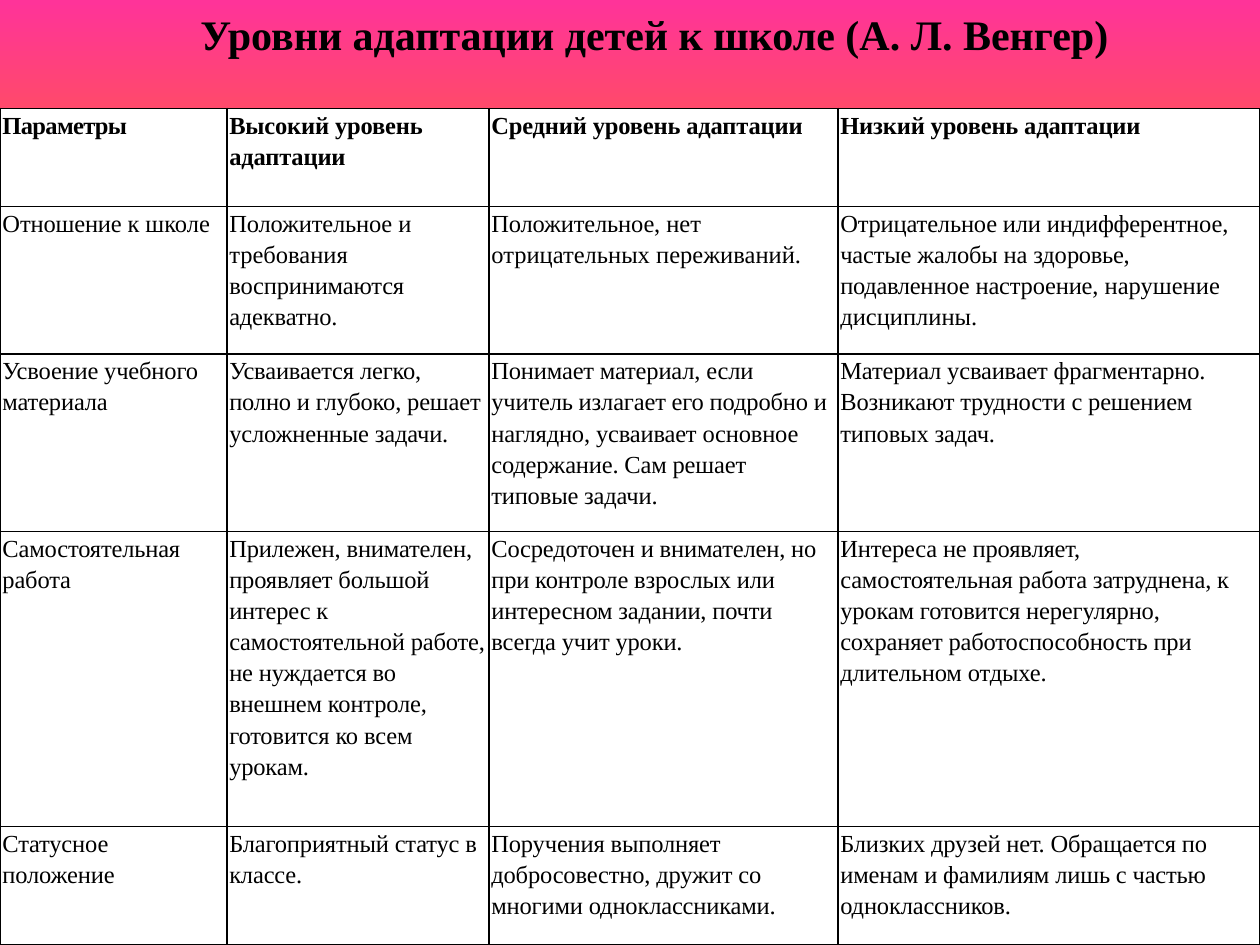
from typing import NamedTuple

from lxml.etree import SubElement
from pptx import Presentation
from pptx.dml.color import RGBColor
from pptx.enum.text import MSO_ANCHOR, PP_ALIGN
from pptx.oxml import parse_xml
from pptx.oxml.ns import nsdecls, qn
from pptx.util import Inches, Pt

COLORS = {"text": "000000", "border": "000000", "cell": "FFFFFF"}
RAINBOW = ["FF3399", "FF6633", "FFFF00", "01A78F", "3366FF"]
FONT = "Times New Roman"
WIDTH, HEIGHT = 10, 7.5

# Column and row sizes of the table, in inches
COLS = [1.8, 2.08, 2.77, 3.35]
ROWS = [0.78, 1.17, 1.41, 2.34, 0.94]
TABLE_TOP = HEIGHT - sum(ROWS)


class Span(NamedTuple):
    text: str
    spacing: int = -10  # hundredths of a point


class Level(NamedTuple):
    """One table row: a parameter and its three adaptation levels."""
    parameter: list[Span]
    high: list[Span]
    middle: list[Span]
    low: list[Span]


LEVELS = [
    Level([Span("Параметры", -40)],
          [Span("Высокий уровень адаптации")],
          [Span("Средний уровень адаптации")],
          [Span("Низкий уровень адаптации")]),
    Level([Span("Отношение к "), Span("школе", 0)],
          [Span("Положительное "), Span("и требования ", 0),
           Span("воспринимаются адекватно.")],
          [Span("Положительное, "), Span("нет отрицательных переживаний.", 0)],
          [Span("Отрицательное или индифферентное, частые жалобы на здо"),
           Span("ровье, подавлен", -20), Span("ное настроение, "),
           Span("нарушение дисциплины.", 0)]),
    Level([Span("Усвоение учебного материала")],
          [Span("Усваивается легко, полно и глубоко, решает усложненные задачи.")],
          [Span("Понимает материал, если учитель излагает его подробно и наглядно, "
                "усваивает основное содержание. Сам решает типовые задачи.")],
          [Span("Материал усваивает фрагментарно. Возникают трудности с решением "
                "типовых задач.")]),
    Level([Span("Самостоятельная работа")],
          [Span("Прилежен, внимателен, проявляет большой интерес к самостоятельной "
                "работе, не нуждается во внешнем контроле, готовится ко всем урокам.")],
          [Span("Сосредоточен и внимателен, но при контроле взрослых или интересном "
                "задании, почти всегда учит уроки.")],
          [Span("Интереса не проявляет, самостоятельная работа затруднена, к урокам "
                "готовится нерегулярно, сохраняет работоспособность при длительном "
                "отдыхе.")]),
    Level([Span("Статусное положение")],
          [Span("Благоприятный статус в классе.")],
          [Span("Поручения выполняет добросовестно, дружит со многими "
                "одноклассниками.")],
          [Span("Близких друзей нет. Обращается по именам и фамилиям лишь с частью "
                "одноклассников.")]),
]


def set_all(obj, values: dict) -> None:
    for name, value in values.items():
        setattr(obj, name, value)


def add_run(p, span: Span, size: int, bold: bool) -> None:
    r = p.add_run()
    r.text = span.text
    set_all(r.font, {"name": FONT, "size": Pt(size), "bold": bold})
    r.font.color.rgb = RGBColor.from_string(COLORS["text"])
    r._r.get_or_add_rPr().set("spc", str(span.spacing))


def paint_background(s) -> None:
    fill = s.background.fill
    fill.gradient()
    fill.gradient_angle = 270
    stops = next(s._element.iter(qn("a:gsLst")))
    stops.clear()
    for i, color in enumerate(RAINBOW):
        stop = SubElement(stops, qn("a:gs"), pos=str(i * 25000))
        SubElement(stop, qn("a:srgbClr"), val=color)


def add_borders(cell) -> None:
    for i, side in enumerate("LRTB"):
        cell._tc.get_or_add_tcPr().insert(i, parse_xml(
            f'<a:ln{side} {nsdecls("a")} w="{Pt(1)}"><a:solidFill>'
            f'<a:srgbClr val="{COLORS["border"]}"/></a:solidFill></a:ln{side}>'))


def fill_cell(cell, spans: list[Span], bold: bool) -> None:
    set_all(cell, {"margin_left": Inches(0.02), "margin_right": Inches(0.02),
                   "margin_top": 0, "margin_bottom": 0})
    cell.fill.solid()
    cell.fill.fore_color.rgb = RGBColor.from_string(COLORS["cell"])
    add_borders(cell)
    p = cell.text_frame.paragraphs[0]
    p.line_spacing = 1.15
    for span in spans:
        add_run(p, span, 14, bold)


def add_levels_table(s) -> None:
    table = s.shapes.add_table(len(ROWS), len(COLS), 0, Inches(TABLE_TOP),
                               Inches(WIDTH), Inches(sum(ROWS))).table
    set_all(table, {"first_row": False, "horz_banding": False})
    for column, width in zip(table.columns, COLS):
        column.width = Inches(width)
    for i, (row, level) in enumerate(zip(table.rows, LEVELS)):
        row.height = Inches(ROWS[i])
        for cell, spans in zip(row.cells, level):
            fill_cell(cell, spans, bold=i == 0)


def add_title(s, text: str) -> None:
    sp = s.shapes.add_textbox(Inches(1.33), 0, Inches(7.73), Inches(0.81))
    tf = sp.text_frame
    set_all(tf, {"word_wrap": True, "vertical_anchor": MSO_ANCHOR.TOP,
                 "margin_top": Inches(0.07)})
    p = tf.paragraphs[0]
    p.alignment = PP_ALIGN.CENTER
    add_run(p, Span(text, 0), 24, True)


def main() -> None:
    prs = Presentation()
    set_all(prs, {"slide_width": Inches(WIDTH), "slide_height": Inches(HEIGHT)})
    s = prs.slides.add_slide(prs.slide_layouts[6])
    paint_background(s)
    add_levels_table(s)
    add_title(s, "Уровни адаптации детей к школе (А. Л. Венгер)")
    prs.save("out.pptx")


if __name__ == "__main__":
    main()
